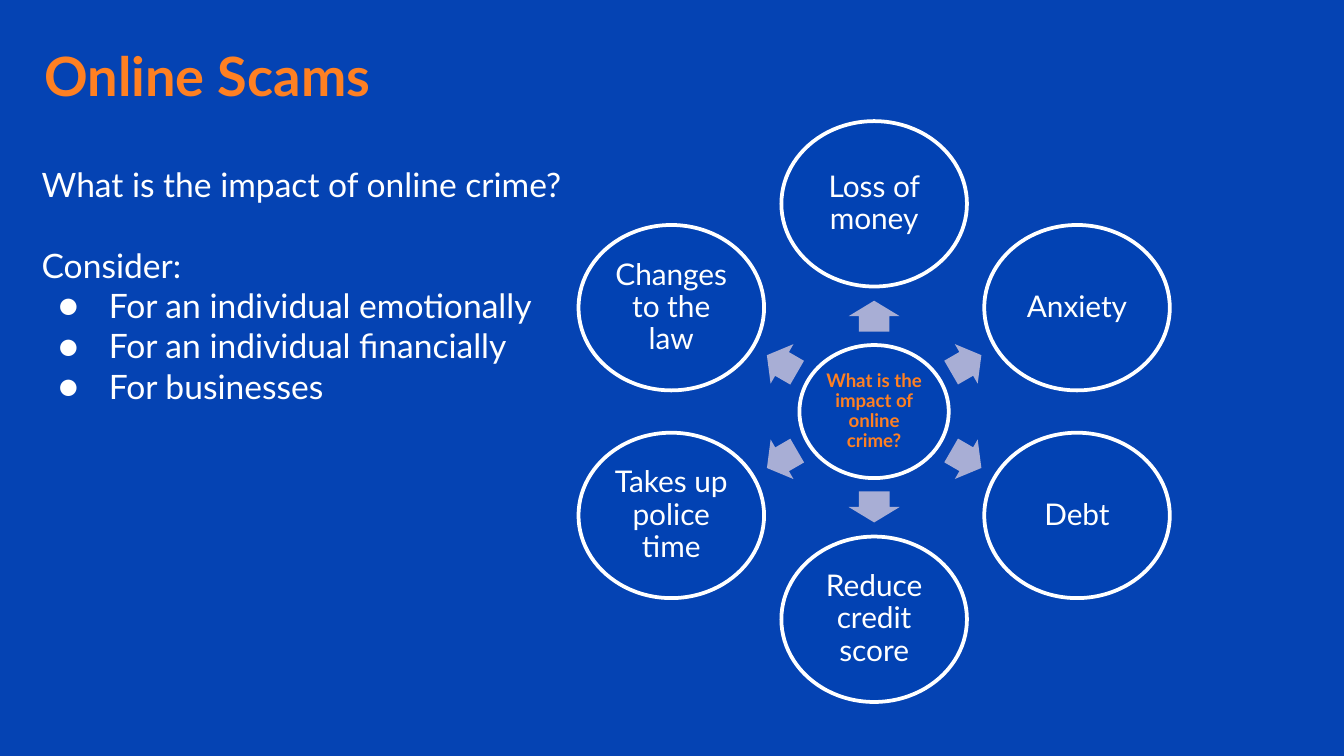
import math

from lxml import etree
from pptx import Presentation
from pptx.dml.color import RGBColor
from pptx.enum.shapes import MSO_SHAPE
from pptx.enum.text import MSO_ANCHOR, MSO_AUTO_SIZE, PP_ALIGN
from pptx.oxml.ns import qn
from pptx.util import Pt

OVAL = MSO_SHAPE.OVAL
ARROW = MSO_SHAPE.RIGHT_ARROW
LEFT, CENTER = PP_ALIGN.LEFT, PP_ALIGN.CENTER
TOP, MIDDLE = MSO_ANCHOR.TOP, MSO_ANCHOR.MIDDLE
NO_AUTOFIT = MSO_AUTO_SIZE.NONE

COLORS = {
    "background": "0543B3",
    "circle": "0242B3",
    "arrow": "A8AED5",
    "accent": "FF8022",
    "text": "FFFFFF",
}
FONT = "Lato"
QUESTION = "What is the impact of online crime?"
CONSIDERATIONS = [
    "For an individual emotionally",
    "For an individual financially",
    "For businesses",
]
# Clockwise from the top
IMPACTS = [
    "Loss of money",
    "Anxiety",
    "Debt",
    "Reduce credit score",
    "Takes up police time",
    "Changes to the law",
]
HUB = (468.3, 220.5)
IMPACT_RADII = (125.5, 111.3)
ARROW_RADII = (57, 51.1)


def color(name):
    return RGBColor.from_string(COLORS[name])


def style_paragraph(paragraph, size, color_name="text", bold=False, align=LEFT):
    paragraph.alignment = align
    paragraph.space_before = Pt(0)
    font = paragraph.font
    font.name, font.size, font.bold = FONT, Pt(size), bold
    font.color.rgb = color(color_name)


def set_bullet(paragraph):
    properties = paragraph._p.get_or_add_pPr()
    properties.set("marL", str(Pt(36)))
    properties.set("indent", str(Pt(-27)))
    bullet_color = etree.SubElement(properties, qn("a:buClr"))
    etree.SubElement(bullet_color, qn("a:srgbClr"), val=COLORS["text"])
    etree.SubElement(properties, qn("a:buFont"), typeface=FONT)
    etree.SubElement(properties, qn("a:buChar"), char="●")


def remove_bullet(paragraph):
    properties = paragraph._p.get_or_add_pPr()
    properties.set("marL", "0")
    properties.set("indent", "0")
    etree.SubElement(properties, qn("a:buNone"))


def set_up_frame(shape, inset, anchor):
    frame = shape.text_frame
    frame.word_wrap = True
    frame.auto_size = NO_AUTOFIT
    frame.vertical_anchor = anchor
    frame.margin_left = frame.margin_right = Pt(inset)
    frame.margin_top = frame.margin_bottom = Pt(inset)
    return frame


def place(shape, left, top, width, height):
    shape.left, shape.top = Pt(left), Pt(top)
    shape.width, shape.height = Pt(width), Pt(height)


def fill_title(title):
    place(title, 16.5, 20.2, 629.3, 40.3)
    frame = set_up_frame(title, 7.2, MIDDLE)
    frame.text = "Online Scams"
    style_paragraph(frame.paragraphs[0], 29, "accent", bold=True)


def fill_body(body):
    place(body, 15.1, 80.6, 298.8, 145.4)
    frame = set_up_frame(body, 7.2, TOP)
    frame.text = "\n".join([QUESTION, "Consider:", *CONSIDERATIONS])
    question, consider, *bullets = frame.paragraphs
    for paragraph in (question, consider):
        remove_bullet(paragraph)
    for paragraph in bullets:
        set_bullet(paragraph)
    for paragraph in frame.paragraphs:
        style_paragraph(paragraph, 18, bold=paragraph is question)
    consider.space_before = Pt(21.6)


def add_centered_shape(slide, kind, center, size, fill):
    (x, y), (width, height) = center, size
    shape = slide.shapes.add_shape(
        kind, Pt(x - width / 2), Pt(y - height / 2), Pt(width), Pt(height)
    )
    shape.shadow.inherit = False
    shape.fill.solid()
    shape.fill.fore_color.rgb = color(fill)
    return shape


def add_circle(slide, center, size, text, font_size, color_name="text", bold=False):
    circle = add_centered_shape(slide, OVAL, center, size, "circle")
    circle.line.color.rgb = color("text")
    circle.line.width = Pt(2)
    frame = set_up_frame(circle, 0.9, MIDDLE)
    frame.text = text
    paragraph = frame.paragraphs[0]
    style_paragraph(paragraph, font_size, color_name, bold, CENTER)
    paragraph.line_spacing = 0.9


def add_arrow(slide, center, size, angle):
    arrow = add_centered_shape(slide, ARROW, center, size, "arrow")
    arrow.line.fill.background()
    arrow.adjustments[0], arrow.adjustments[1] = 0.6, 0.5
    arrow.rotation = angle % 360


def point_on_ring(radii, angle):
    radians = math.radians(angle)
    return (
        HUB[0] + radii[0] * math.cos(radians),
        HUB[1] + radii[1] * math.sin(radians),
    )


def add_impact_diagram(slide):
    add_circle(slide, HUB, (80, 71.3), QUESTION, 10, "accent", bold=True)
    step = 360 // len(IMPACTS)
    for index, impact in enumerate(IMPACTS):
        angle = index * step - 90
        is_vertical = angle % 180 == 90
        arrow_size = (16.6, 27.4) if is_vertical else (18.7, 24.5)
        add_arrow(slide, point_on_ring(ARROW_RADII, angle), arrow_size, angle)
        add_circle(slide, point_on_ring(IMPACT_RADII, angle), (99.4, 88.6), impact, 16)


def main():
    presentation = Presentation()
    presentation.slide_width, presentation.slide_height = Pt(720), Pt(405)
    slide = presentation.slides.add_slide(presentation.slide_layouts[1])
    slide.background.fill.solid()
    slide.background.fill.fore_color.rgb = color("background")
    fill_title(slide.shapes.title)
    fill_body(slide.placeholders[1])
    add_impact_diagram(slide)
    presentation.save("out.pptx")


if __name__ == "__main__":
    main()
